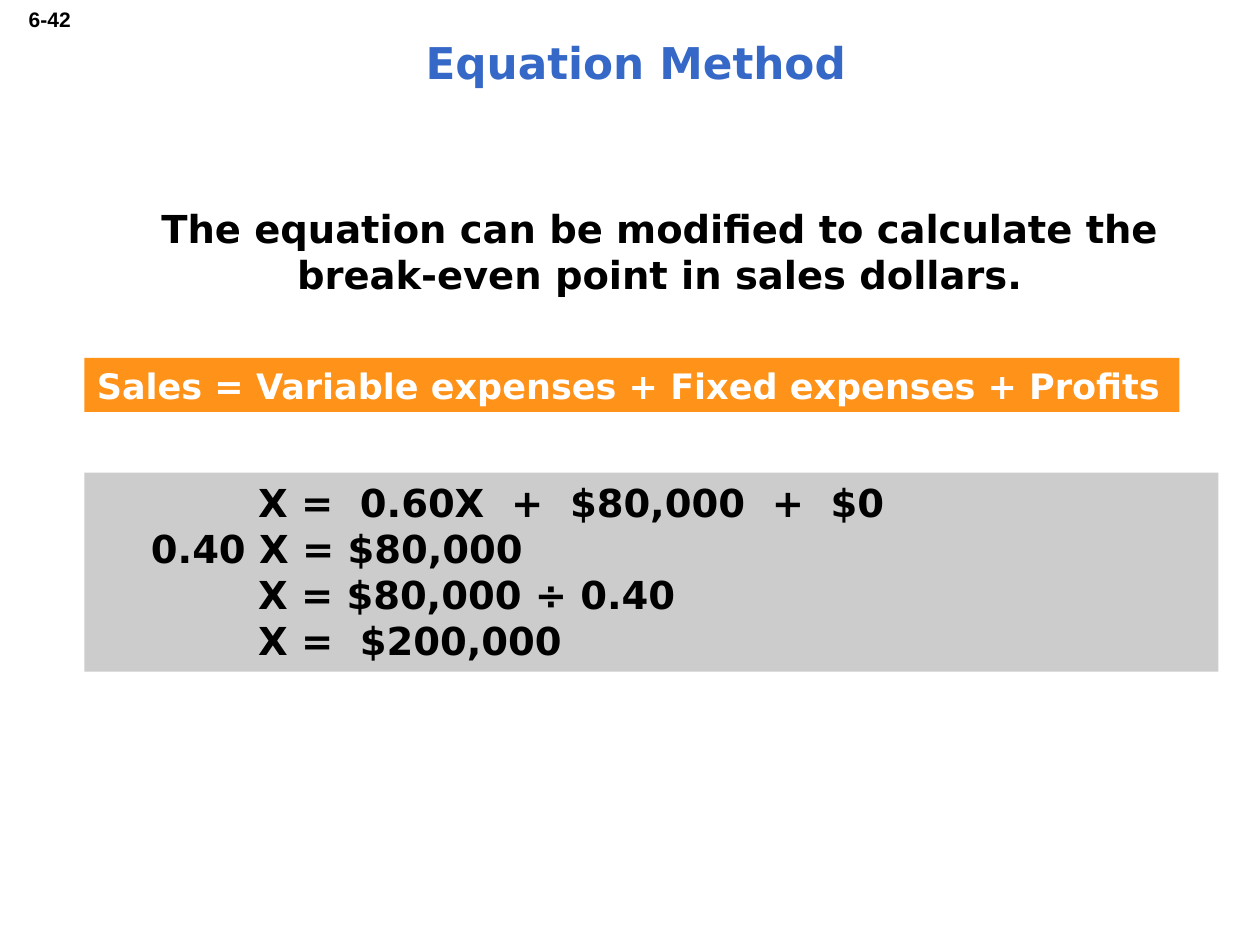
"""Build the Equation Method slide on break-even sales dollars."""
from dataclasses import dataclass
from typing import Optional

from pptx import Presentation
from pptx import util as u
from pptx.dml.color import RGBColor
from pptx.enum import shapes, text
from pptx.slide import Slide

BLACK = RGBColor(0x00, 0x00, 0x00)
WHITE = RGBColor(0xFF, 0xFF, 0xFF)
BLUE = RGBColor(0x35, 0x68, 0xC7)
ORANGE = RGBColor(0xFF, 0x92, 0x18)
GREY = RGBColor(0xCC, 0xCC, 0xCC)

LEFT = 0.67
X_INDENT = 1.28
COEFFICIENT_INDENT = 0.43


@dataclass(frozen=True)
class Line:
    wording: str
    indent: float = 0


@dataclass(frozen=True)
class Block:
    lines: tuple[Line, ...]
    left: float
    top: float
    width: float
    height: float
    size: int
    color: RGBColor = BLACK
    fill: Optional[RGBColor] = None
    align: text.PP_ALIGN = text.PP_ALIGN.LEFT
    anchor: text.MSO_ANCHOR = text.MSO_ANCHOR.TOP
    font: str = "DejaVu Sans"
    wrap: bool = True


BLOCKS = (
    Block((Line("6-42"),), 0.11, 0, 0.55, 0.3, 12,
          align=text.PP_ALIGN.RIGHT, font="Arial", wrap=False),
    Block((Line("Equation Method"),), 0.17, 0.08, 9.75, 0.83, 25, BLUE,
          align=text.PP_ALIGN.CENTER, anchor=text.MSO_ANCHOR.MIDDLE),
    Block((Line("X =  0.60X  +  $80,000  +  $0", X_INDENT),
           Line("0.40 X = $80,000", COEFFICIENT_INDENT),
           Line("X = $80,000 ÷ 0.40", X_INDENT),
           Line("X =  $200,000", X_INDENT)),
          LEFT, 3.75, 9, 1.58, 22, fill=GREY),
    Block((Line("Sales = Variable expenses + Fixed expenses + Profits"),),
          LEFT, 2.84, 8.69, 0.43, 20, WHITE, fill=ORANGE),
    Block((Line("The equation can be modified to calculate the "
                "break-even point in sales dollars.", 0.38),),
          LEFT, 1.58, 8.75, 0.96, 22, align=text.PP_ALIGN.CENTER),
)


def draw_block(slide: Slide, block: Block) -> None:
    bounds = [u.Inches(v) for v in (block.left, block.top, block.width, block.height)]
    if block.fill is None:
        panel = slide.shapes.add_textbox(*bounds)
    else:
        panel = slide.shapes.add_shape(shapes.MSO_SHAPE.RECTANGLE, *bounds)
        panel.shadow.inherit = False
        panel.fill.solid()
        panel.fill.fore_color.rgb = block.fill
        panel.line.fill.background()
    frame = panel.text_frame
    frame.word_wrap = block.wrap
    frame.vertical_anchor = block.anchor
    for index, line in enumerate(block.lines):
        paragraph = frame.add_paragraph() if index else frame.paragraphs[0]
        paragraph.text = line.wording
        paragraph.alignment = block.align
        paragraph.font.name = block.font
        paragraph.font.size = u.Pt(block.size)
        paragraph.font.bold = True
        paragraph.font.color.rgb = block.color
        if line.indent:
            paragraph._p.get_or_add_pPr().set("marL", str(u.Inches(line.indent)))


def main() -> None:
    deck = Presentation()
    deck.slide_width, deck.slide_height = u.Inches(10), u.Inches(7.5)
    slide = deck.slides.add_slide(deck.slide_layouts[6])
    for block in BLOCKS:
        draw_block(slide, block)
    deck.save("out.pptx")


if __name__ == "__main__":
    main()
